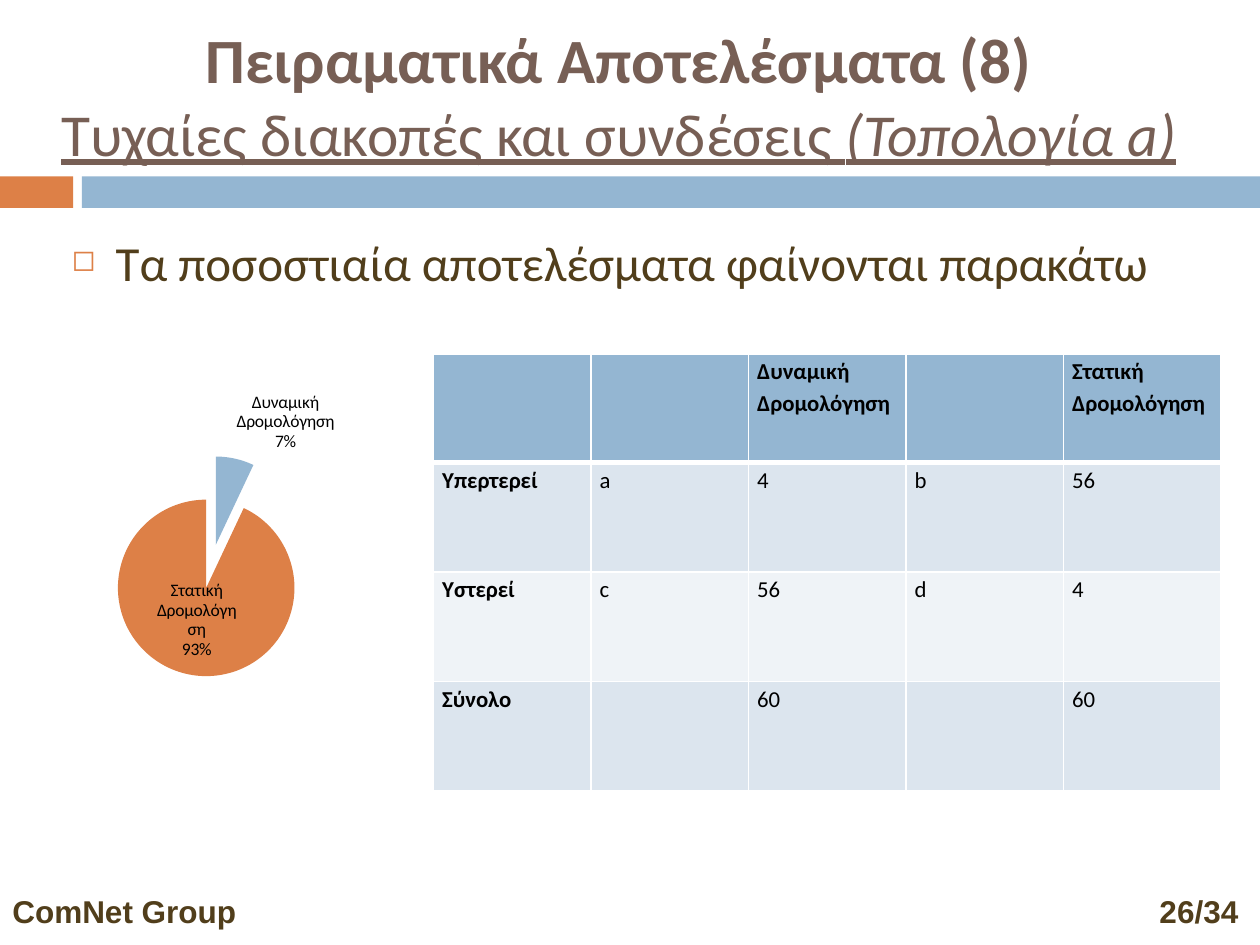
"""Build the slide with the percentage results of random link failures."""
from dataclasses import dataclass

from lxml.etree import SubElement
from pptx import Presentation
from pptx.chart.data import CategoryChartData
from pptx.dml.color import RGBColor
from pptx.enum.chart import XL_CHART_TYPE, XL_LABEL_POSITION
from pptx.enum.shapes import MSO_SHAPE
from pptx.enum.text import MSO_ANCHOR, PP_ALIGN
from pptx.oxml import parse_xml
from pptx.oxml.ns import nsdecls, qn
from pptx.util import Inches, Pt

COLORS = {
    "orange": "DD8047", "blue": "94B6D2", "brown": "513E1B", "title": "775F55",
    "odd": "DCE5EE", "even": "EFF3F7", "white": "FFFFFF", "black": "000000",
}
DYNAMIC, STATIC = "Δυναμική Δρομολόγηση", "Στατική Δρομολόγηση"
RESULTS = [
    ["", "", DYNAMIC, "", STATIC],
    ["Υπερτερεί", "a", "4", "b", "56"],
    ["Υστερεί", "c", "56", "d", "4"],
    ["Σύνολο", "", "60", "", "60"],
]
ROW_FILLS = ["blue", "odd", "even", "odd"]


@dataclass
class Area:
    """Position and size in inches."""
    left: float
    top: float
    width: float
    height: float

    def lengths(self):
        """Return the four values as lengths."""
        return [Inches(value) for value in (self.left, self.top, self.width, self.height)]


def color(name: str) -> RGBColor:
    """Look up a named colour."""
    return RGBColor.from_string(COLORS[name])


def style(font, size: float, tint: str, bold: bool = False, family: str = "Calibri") -> None:
    """Format a font."""
    font.size, font.name, font.bold = Pt(size), family, bold
    font.color.rgb = color(tint)


def add_bar(page, area: Area, tint: str) -> None:
    """Draw a plain rectangle of the title band."""
    bar = page.shapes.add_shape(MSO_SHAPE.RECTANGLE, *area.lengths())
    bar.shadow.inherit = False
    bar.fill.solid()
    bar.fill.fore_color.rgb = color(tint)
    bar.line.fill.background()


def add_text(page, area: Area, text: str):
    """Add a wrapped text box and return its frame and first paragraph."""
    frame = page.shapes.add_textbox(*area.lengths()).text_frame
    frame.word_wrap = True
    para = frame.paragraphs[0]
    para.text = text
    return frame, para


def add_title(page) -> None:
    """Add the two-line centred title."""
    frame, para = add_text(
        page, Area(0, 0.21, 9.82, 1.08),
        "Πειραματικά Αποτελέσματα (8)\vΤυχαίες διακοπές και συνδέσεις ")
    frame.vertical_anchor = MSO_ANCHOR.MIDDLE
    para.alignment = PP_ALIGN.CENTER
    para.add_run().text = "(Τοπολογία a)"
    heading, subtitle, topology = para.runs
    style(heading.font, 36, "title", bold=True)
    for span in (subtitle, topology):
        style(span.font, 34, "title")
        span.font.underline = True
    topology.font.italic = True


def add_bullet(page) -> None:
    """Add the bulleted statement."""
    para = add_text(page, Area(0.47, 1.8, 8.92, 5.44),
                    "Τα ποσοστιαία αποτελέσματα φαίνονται παρακάτω")[1]
    para.space_before = Pt(7)
    style(para.runs[0].font, 28, "brown")
    properties = para._p.get_or_add_pPr()
    properties.set("marL", str(Inches(0.35)))
    properties.set("indent", str(-Inches(0.35)))
    tint = SubElement(properties, qn("a:buClr"))
    SubElement(tint, qn("a:srgbClr"), val=COLORS["orange"])
    SubElement(properties, qn("a:buSzPct"), val="60000")
    SubElement(properties, qn("a:buChar"), char="◻")


def add_footer(page) -> None:
    """Add the group name with the page number at a right tab stop."""
    para = add_text(page, Area(0, 7.03, 10, 0.4), "ComNet Group\t26/34")[1]
    for span in para.runs:
        style(span.font, 18, "brown", bold=True, family="Arial")
    stops = SubElement(para._p.get_or_add_pPr(), qn("a:tabLst"))
    SubElement(stops, qn("a:tab"), pos=str(Inches(9.73)), algn="r")


def add_pie(page, area: Area) -> None:
    """Add the exploded pie of the two routing methods."""
    data = CategoryChartData()
    data.categories = [DYNAMIC, STATIC]
    data.add_series("Series 1", [7, 93])
    chart = page.shapes.add_chart(XL_CHART_TYPE.PIE, *area.lengths(), data).chart
    chart.has_legend = chart.has_title = False
    style(chart.font, 10, "black")
    plot = chart.plots[0]
    plot.vary_by_categories = True
    series = plot.series[0]
    for index, tint in enumerate(("blue", "orange")):
        fill = series.points[index].format.fill
        fill.solid()
        fill.fore_color.rgb = color(tint)
    explosion = parse_xml(f'<c:explosion {nsdecls("c")} val="25"/>')
    series._element.find(qn("c:dPt")).addprevious(explosion)
    plot.has_data_labels = True
    labels = plot.data_labels
    labels.show_category_name = labels.show_percentage = True
    labels.show_value = False
    labels.position = XL_LABEL_POSITION.BEST_FIT
    style(labels.font, 10, "black")


def add_borders(cell, widths: dict[str, float]) -> None:
    """Give a cell white borders, placed before its fill."""
    properties = cell._tc.get_or_add_tcPr()
    for index, (side, width) in enumerate(widths.items()):
        properties.insert(index, parse_xml(
            f'<a:ln{side} {nsdecls("a")} w="{Pt(width)}"><a:solidFill>'
            f'<a:srgbClr val="{COLORS["white"]}"/></a:solidFill></a:ln{side}>'))


def add_results(page, area: Area) -> None:
    """Add the results table."""
    table = page.shapes.add_table(len(RESULTS), len(RESULTS[0]), *area.lengths()).table
    for index, row in enumerate(table.rows):
        row.height = Inches(0.87 if index else 0.86)
    for row, values in enumerate(RESULTS):
        for column, value in enumerate(values):
            cell = table.cell(row, column)
            cell.fill.solid()
            cell.fill.fore_color.rgb = color(ROW_FILLS[row])
            add_borders(cell, {"L": 1, "R": 1, "T": 3 if row == 1 else 1, "B": 1 if row else 3})
            cell.margin_left = cell.margin_right = Inches(0.07)
            cell.margin_top = cell.margin_bottom = 0
            cell.text = value
            para = cell.text_frame.paragraphs[0]
            para.line_spacing, para.space_after = 1.15, Pt(10)
            style(para.font, 13, "black")
            for span in para.runs:
                style(span.font, 13, "black", bold=row == 0 or column == 0)


def main() -> None:
    """Build and save the deck."""
    deck = Presentation()
    deck.slide_width, deck.slide_height = Inches(10), Inches(7.5)
    page = deck.slides.add_slide(deck.slide_layouts[6])
    add_bar(page, Area(0, 1.4, 0.58, 0.25), "orange")
    add_bar(page, Area(0.65, 1.4, 9.35, 0.25), "blue")
    add_bullet(page)
    add_pie(page, Area(-0.63, 2.97, 4.61, 3.05))
    add_results(page, Area(3.44, 2.81, 6.25, 3.47))
    add_footer(page)
    add_title(page)
    deck.save("out.pptx")


if __name__ == "__main__":
    main()
